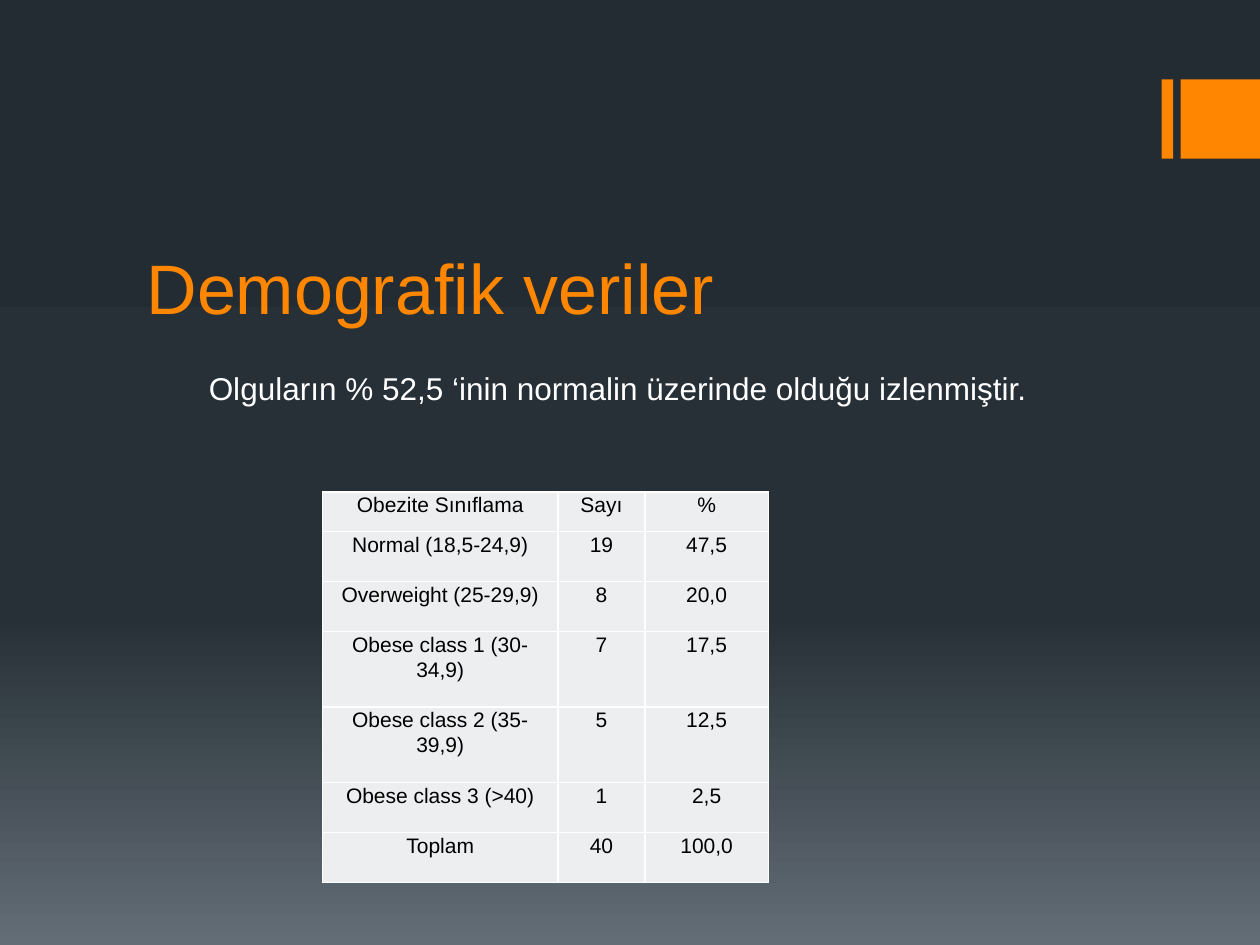
from copy import deepcopy

from lxml.etree import SubElement
from pptx import Presentation
from pptx.dml.color import RGBColor
from pptx.enum.shapes import MSO_SHAPE
from pptx.enum.text import MSO_ANCHOR, MSO_AUTO_SIZE, PP_ALIGN
from pptx.oxml.ns import qn
from pptx.util import Cm, Pt

# Content
TITLE = "Demografik veriler"
FINDING = "Olguların % 52,5 ‘inin normalin üzerinde olduğu izlenmiştir."
OBESITY_ROWS = [
    ("Obezite Sınıflama", "Sayı", "%"),
    ("Normal (18,5-24,9)", "19", "47,5"),
    ("Overweight (25-29,9)", "8", "20,0"),
    ("Obese class 1 (30-34,9)", "7", "17,5"),
    ("Obese class 2 (35-39,9)", "5", "12,5"),
    ("Obese class 3 (>40)", "1", "2,5"),
    ("Toplam", "40", "100,0"),
]

# Look and measures, in centimetres
FONT = "Arial"
COLORS = {"accent": "FF8600", "text": "FFFFFF", "cell": "EDEEEF",
          "cell text": "000000", "border": "FFFFFF"}
BACKGROUND = [(0, "242C33"), (0.65, "273037"), (1, "636D76")]
COLUMN_WIDTHS = [4.75, 1.75, 2.49]
HEADER_HEIGHT, ROW_HEIGHT, TALL_ROW_HEIGHT = 0.79, 1.01, 1.52
WRAP_LENGTH = 20  # longer labels take two lines
BAR_TOP, BAR_SIZE, SLIDE_WIDTH = 1.6, 1.6, 25.4
BARS = [(23.42, 0.23), (SLIDE_WIDTH - BAR_SIZE, BAR_SIZE)]  # left, width


def rgb(name):
    return RGBColor.from_string(COLORS[name])


def add_text(paragraph, text, size, color):
    run = paragraph.add_run()
    run.text = text
    run.font.name = FONT
    run.font.size = Pt(size)
    run.font.color.rgb = rgb(color)


def place(shape, left, top, width, height):
    shape.left, shape.top = Cm(left), Cm(top)
    shape.width, shape.height = Cm(width), Cm(height)


def add_borders(cell):
    properties = cell._tc.get_or_add_tcPr()
    for index, side in enumerate(("a:lnL", "a:lnR", "a:lnT", "a:lnB")):
        line = SubElement(properties, qn(side), w=str(Pt(1)))
        fill = SubElement(line, qn("a:solidFill"))
        SubElement(fill, qn("a:srgbClr"), val=COLORS["border"])
        properties.insert(index, line)


def row_height(index, label):
    if index == 0:
        return HEADER_HEIGHT
    return TALL_ROW_HEIGHT if len(label) > WRAP_LENGTH else ROW_HEIGHT


def paint_background(slide):
    fill = slide.background.fill
    fill.gradient()
    fill.gradient_angle = 270
    stop_list = next(slide._element.iter(qn("a:gsLst")))
    stop_list.append(deepcopy(stop_list[-1]))
    for stop, (position, color) in zip(fill.gradient_stops, BACKGROUND):
        stop.position = position
        stop.color.rgb = RGBColor.from_string(color)


def add_obesity_table(slide):
    heights = [row_height(i, row[0]) for i, row in enumerate(OBESITY_ROWS)]
    table = slide.shapes.add_table(
        len(OBESITY_ROWS), len(COLUMN_WIDTHS), Cm(6.5), Cm(9.92),
        Cm(sum(COLUMN_WIDTHS)), Cm(sum(heights))).table
    for column, width in zip(table.columns, COLUMN_WIDTHS):
        column.width = Cm(width)
    for row, height, values in zip(table.rows, heights, OBESITY_ROWS):
        row.height = Cm(height)
        for cell, value in zip(row.cells, values):
            cell.margin_left = cell.margin_right = Cm(0.18)
            cell.margin_top = cell.margin_bottom = 0
            cell.fill.solid()
            cell.fill.fore_color.rgb = rgb("cell")
            add_borders(cell)
            paragraph = cell.text_frame.paragraphs[0]
            paragraph.alignment = PP_ALIGN.CENTER
            paragraph.line_spacing = 1.07
            add_text(paragraph, value, 12, "cell text")


def main():
    presentation = Presentation()
    presentation.slide_width, presentation.slide_height = Cm(SLIDE_WIDTH), Cm(19.05)
    slide = presentation.slides.add_slide(presentation.slide_layouts[5])
    paint_background(slide)

    # Accent bars at the right edge
    for left, width in BARS:
        bar = slide.shapes.add_shape(
            MSO_SHAPE.RECTANGLE, Cm(left), Cm(BAR_TOP), Cm(width), Cm(BAR_SIZE))
        bar.shadow.inherit = False
        bar.fill.solid()
        bar.fill.fore_color.rgb = rgb("accent")
        bar.line.fill.background()

    # Title
    title = slide.shapes.title
    place(title, 2.7, 3.55, 20.32, 3.2)
    title.text_frame.vertical_anchor = MSO_ANCHOR.BOTTOM
    title.text_frame.auto_size = MSO_AUTO_SIZE.NONE
    heading = title.text_frame.paragraphs[0]
    heading.alignment = PP_ALIGN.LEFT
    add_text(heading, TITLE, 40, "accent")

    add_obesity_table(slide)

    # Finding above the table
    finding = slide.shapes.add_textbox(Cm(3.96), Cm(7.32), Cm(18.34), Cm(1.03))
    finding.text_frame.word_wrap = True
    finding.text_frame.auto_size = MSO_AUTO_SIZE.SHAPE_TO_FIT_TEXT
    add_text(finding.text_frame.paragraphs[0], FINDING, 18, "text")

    presentation.save("out.pptx")


if __name__ == "__main__":
    main()
